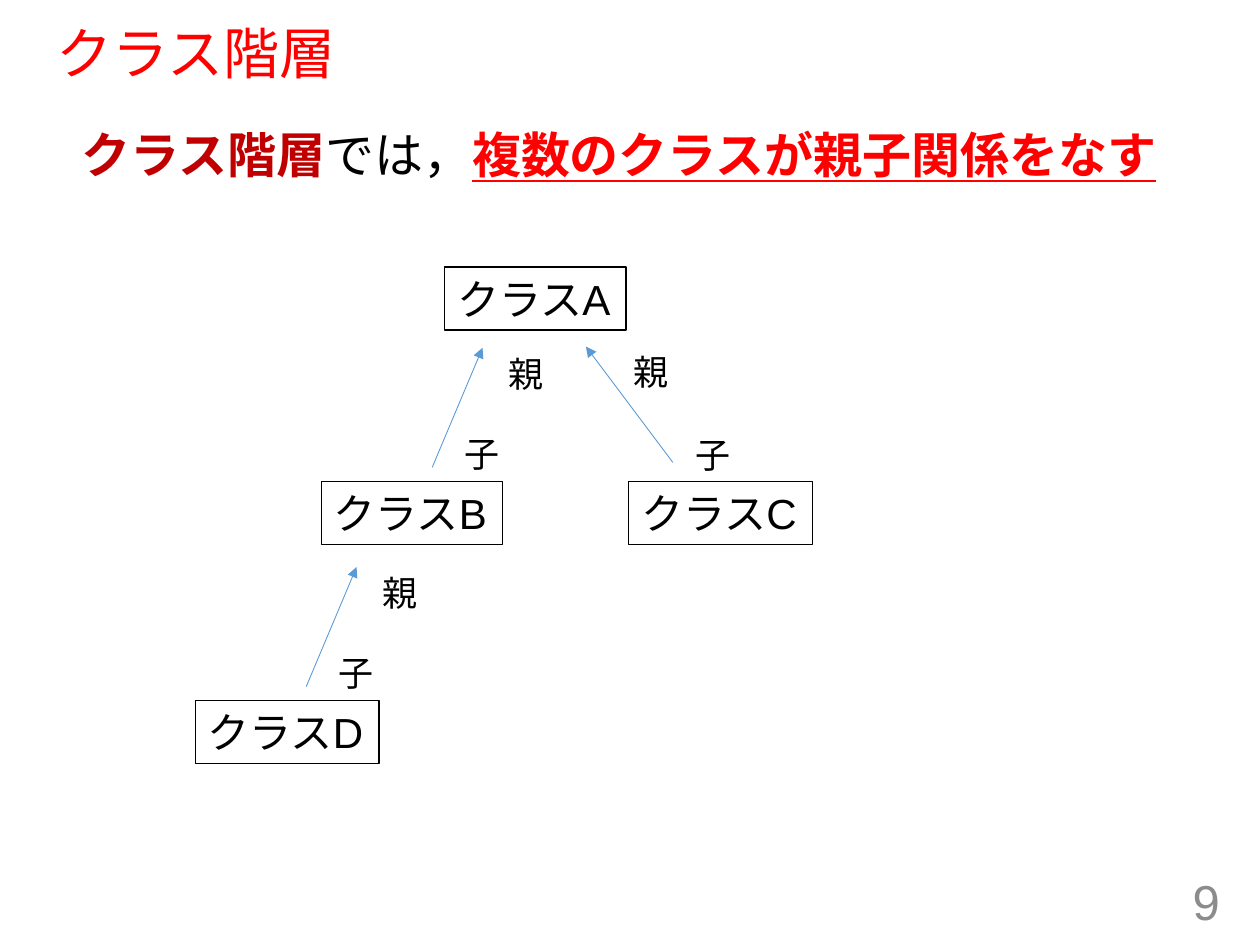
from lxml.etree import SubElement
from pptx import Presentation
from pptx.dml.color import RGBColor
from pptx.enum.lang import MSO_LANGUAGE_ID
from pptx.enum.shapes import MSO_CONNECTOR, MSO_SHAPE
from pptx.enum.text import MSO_ANCHOR, PP_ALIGN
from pptx.oxml.ns import qn
from pptx.util import Inches, Pt

COLUMNS, ROWS = 100, 75
SLIDE_WIDTH, SLIDE_HEIGHT = Inches(10), Inches(7.5)
BLACK, RED, DARK_RED, GREY, BLUE = "000000", "FF0000", "C00000", "8C8C8C", "5B9BD5"
NODE_HEIGHT = 5
RIGHTWARD = {"start": (8.8, -1.1), "tip": (12.8, -10.6), "親": (13.9, -10.7), "子": (10.4, -4.4)}
LEFTWARD = {"start": (3.5, -1.5), "tip": (-3.4, -10.7), "親": (-0.6, -10.9), "子": (4.3, -4.3)}


def color(code):
    """Turn a hex string into a colour."""
    return RGBColor.from_string(code)


def grid(*cells):
    """Turn alternating columns and rows into slide lengths."""
    units = (SLIDE_WIDTH / COLUMNS, SLIDE_HEIGHT / ROWS)
    return [round(cell * units[index % 2]) for index, cell in enumerate(cells)]


def write(shape, spans, size, wrap=True, anchor=MSO_ANCHOR.TOP, **paragraph_format):
    """Write one paragraph of (text, colour, font format) spans."""
    frame = shape.text_frame
    frame.word_wrap, frame.vertical_anchor = wrap, anchor
    para = frame.paragraphs[0]
    for name, value in ({"alignment": PP_ALIGN.LEFT} | paragraph_format).items():
        setattr(para, name, value)
    for text, code, emphasis in spans:
        span = para.add_run()
        span.text = text
        span.font.color.rgb = color(code)
        base = {"name": "Arial", "size": Pt(size), "language_id": MSO_LANGUAGE_ID.JAPANESE}
        for name, value in (base | emphasis).items():
            setattr(span.font, name, value)


def add_text(page, box, spans, size, **layout):
    """Place a text box on the grid."""
    write(page.shapes.add_textbox(*grid(*box)), spans, size, **layout)


def add_node(page, name, left, top, width):
    """Draw one class as an outlined box."""
    node = page.shapes.add_shape(MSO_SHAPE.RECTANGLE, *grid(left, top, width, NODE_HEIGHT))
    node.shadow.inherit = False
    node.fill.background()
    node.line.color.rgb = color(BLACK)
    node.line.width = Pt(0.75)
    write(node, [(name, BLACK, {})], 24, wrap=False)


def add_arrow(page, start, tip):
    """Draw a thin arrow from child to parent."""
    arrow = page.shapes.add_connector(MSO_CONNECTOR.STRAIGHT, *grid(*start, *tip))
    arrow.line.color.rgb = color(BLUE)
    arrow.line.width = Pt(0.5)
    SubElement(arrow.line._get_or_add_ln(), qn("a:tailEnd"), type="triangle")
    SubElement(arrow._element.spPr, qn("a:effectLst"))


def add_branch(page, name, left, top, width, offsets):
    """Draw a child class with its arrow and role labels."""
    add_node(page, name, left, top, width)
    points = {key: (left + x, top + y) for key, (x, y) in offsets.items()}
    add_arrow(page, points["start"], points["tip"])
    for role in ("親", "子"):
        add_text(page, (*points[role], 4.8, 4.4), [(role, BLACK, {})], 20, wrap=False)


def add_hierarchy(page, left, top):
    """Draw the class tree inside its region."""
    add_node(page, "クラスA", left + 19.8, top, 14.4)
    add_branch(page, "クラスB", left + 10, top + 17, 14.4, RIGHTWARD)
    add_branch(page, "クラスD", left, top + 34.4, 14.6, RIGHTWARD)
    add_branch(page, "クラスC", left + 34.4, top + 17, 14.6, LEFTWARD)


def add_wording(page):
    """Place the title, the statement and the page number."""
    add_text(page, (3.5, 1.9, 92.5, 5.1), [("クラス階層", RED, {})], 32,
             anchor=MSO_ANCHOR.MIDDLE, line_spacing=0.9)
    statement = [
        ("クラス階層", DARK_RED, {"bold": True}),
        ("では，", BLACK, {}),
        ("複数のクラスが親子関係をなす", RED, {"bold": True, "underline": True}),
    ]
    add_text(page, (5.5, 9.4, 89.4, 45.5), statement, 28)
    add_text(page, (75.3, 69.5, 22.5, 4), [("9", GREY, {})], 28,
             anchor=MSO_ANCHOR.MIDDLE, alignment=PP_ALIGN.RIGHT)


def main():
    """Build and save the deck."""
    deck = Presentation()
    deck.slide_width, deck.slide_height = SLIDE_WIDTH, SLIDE_HEIGHT
    page = deck.slides.add_slide(deck.slide_layouts[6])
    add_wording(page)
    add_hierarchy(page, 15.5, 21.2)
    deck.save("out.pptx")


if __name__ == "__main__":
    main()
